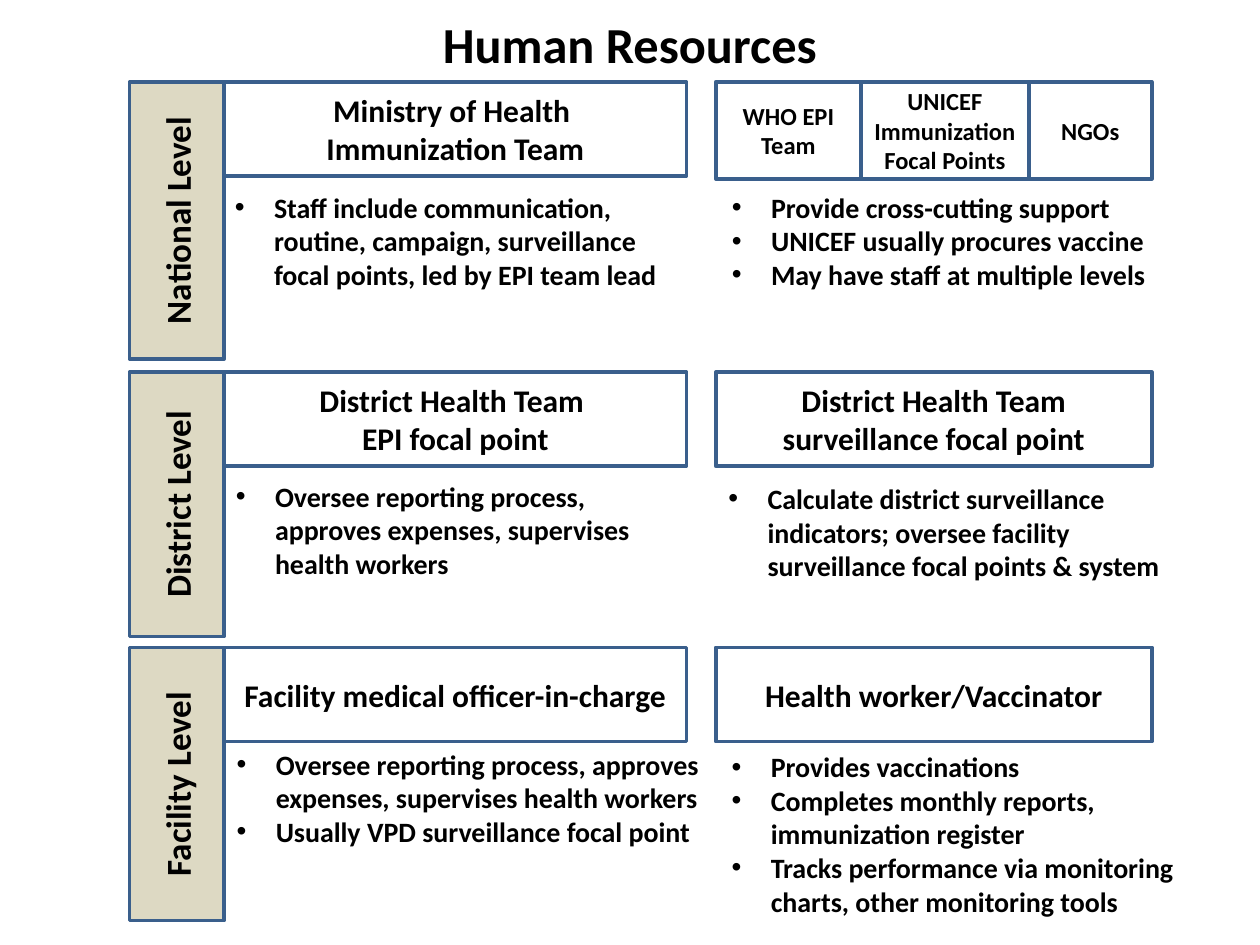
from lxml import etree
from pptx import Presentation
from pptx.dml.color import RGBColor
from pptx.enum import shapes, text
from pptx.oxml.ns import qn
from pptx.util import Cm, Pt

THEME = {
    "font": "Calibri", "ink": "000000", "line": "3A5F8C", "bar": "DDD9C3",
    "title": 28.8, "level": 20, "head": 18, "small": 14, "list": 16,
}

TITLE = "Human Resources"
ROWS = [
    {"level": "National Level", "top": 1.65, "tall": 5.59,
     "heads": [
         [(["Ministry of Health ", "Immunization Team"], 9.32)],
         [(["WHO EPI Team"], 2.93),
          (["UNICEF Immunization Focal Points"], 3.38),
          (["NGOs"], 2.48)]],
     "lists": [
         (["Staff include communication, routine, campaign, surveillance "
           "focal points, led by EPI team lead"], (4.48, 3.71, 9.32, 2.31)),
         (["Provide cross-cutting support",
           "UNICEF usually procures vaccine",
           "May have staff at multiple levels"], (14.5, 3.71, 9.83, 3.0))]},
    {"level": "District Level", "top": 7.5, "tall": 5.33,
     "heads": [
         [(["District Health Team ", "EPI focal point"], 9.32)],
         [(["District Health Team surveillance focal point"], 8.79)]],
     "lists": [
         (["Oversee reporting process, approves expenses, supervises "
           "health workers"], (4.5, 9.53, 9.32, 2.31)),
         (["Calculate district surveillance indicators; oversee facility "
           "surveillance focal points & system"], (14.43, 9.58, 9.9, 2.31))]},
    {"level": "Facility Level", "top": 13.05, "tall": 5.51,
     "heads": [
         [(["Facility medical officer-in-charge"], 9.32)],
         [(["Health worker/Vaccinator"], 8.79)]],
     "lists": [
         (["Oversee reporting process, approves expenses, supervises "
           "health workers",
           "Usually VPD surveillance focal point"], (4.52, 14.94, 9.96, 2.31)),
         (["Provides vaccinations",
           "Completes monthly reports, immunization register",
           "Tracks performance via monitoring charts, other monitoring tools"],
          (14.5, 14.99, 10.46, 3.68))]},
]
COLS = [4.52, 14.43]
BAR = 1.91
HEAD = 1.9
SPLIT = 1.96
INDENT = 0.79


def color(name):
    return RGBColor.from_string(THEME[name])


def place(shape, left, top, wide, tall):
    shape.left, shape.top = Cm(left), Cm(top)
    shape.width, shape.height = Cm(wide), Cm(tall)


def write(shape, lines, size, align=text.PP_ALIGN.CENTER,
          anchor=text.MSO_ANCHOR.MIDDLE, fit=text.MSO_AUTO_SIZE.NONE,
          bullet=False):
    frame = shape.text_frame
    frame.word_wrap, frame.auto_size = True, fit
    frame.vertical_anchor = anchor
    for i, line in enumerate(lines):
        para = frame.add_paragraph() if i else frame.paragraphs[0]
        para.alignment = align
        para.space_before = Pt(0)
        if bullet:
            props = para._p.get_or_add_pPr()
            props.set("marL", str(Cm(INDENT)))
            props.set("indent", str(-Cm(INDENT)))
            etree.SubElement(props, qn("a:buFont")).set("typeface", "Arial")
            etree.SubElement(props, qn("a:buChar")).set("char", "•")
        run = para.add_run()
        run.text = line
        font = run.font
        font.name, font.size, font.bold = THEME["font"], Pt(THEME[size]), True
        font.color.rgb = color("ink")


def box(slide, lines, size, spot, fill=None, turn=0):
    shape = slide.shapes.add_shape(
        shapes.MSO_SHAPE.RECTANGLE, *(Cm(n) for n in spot))
    shape.shadow.inherit = False
    shape.rotation = turn
    if fill:
        shape.fill.solid()
        shape.fill.fore_color.rgb = color(fill)
    else:
        shape.fill.background()
    shape.line.color.rgb = color("line")
    shape.line.width = Pt(2)
    write(shape, lines, size)


def main():
    deck = Presentation()
    deck.slide_width, deck.slide_height = Cm(25.4), Cm(19.05)
    slide = deck.slides.add_slide(
        deck.slide_layouts.get_by_name("Comparison"))

    title = slide.shapes.title
    place(title, 1.27, 0.2, 22.86, 1.35)
    write(title, [TITLE], "title")
    slots = [p for p in slide.placeholders if p.placeholder_format.idx > 0]

    for row in ROWS:
        top, tall = row["top"], row["tall"]
        mid = COLS[0] - BAR / 2
        box(slide, [row["level"]], "level",
            (mid - tall / 2, top + (tall - BAR) / 2, tall, BAR),
            fill="bar", turn=270)
        for left, cells in zip(COLS, row["heads"]):
            split = len(cells) > 1
            for lines, wide in cells:
                box(slide, lines, "small" if split else "head",
                    (left, top, wide, SPLIT if split else HEAD))
                left += wide
        for lines, spot in row["lists"]:
            body = slots.pop(0) if slots else slide.shapes.add_textbox(0, 0, 0, 0)
            place(body, *spot)
            write(body, lines, "list", align=text.PP_ALIGN.LEFT,
                  anchor=text.MSO_ANCHOR.TOP,
                  fit=text.MSO_AUTO_SIZE.SHAPE_TO_FIT_TEXT, bullet=True)

    deck.save("out.pptx")


if __name__ == "__main__":
    main()
